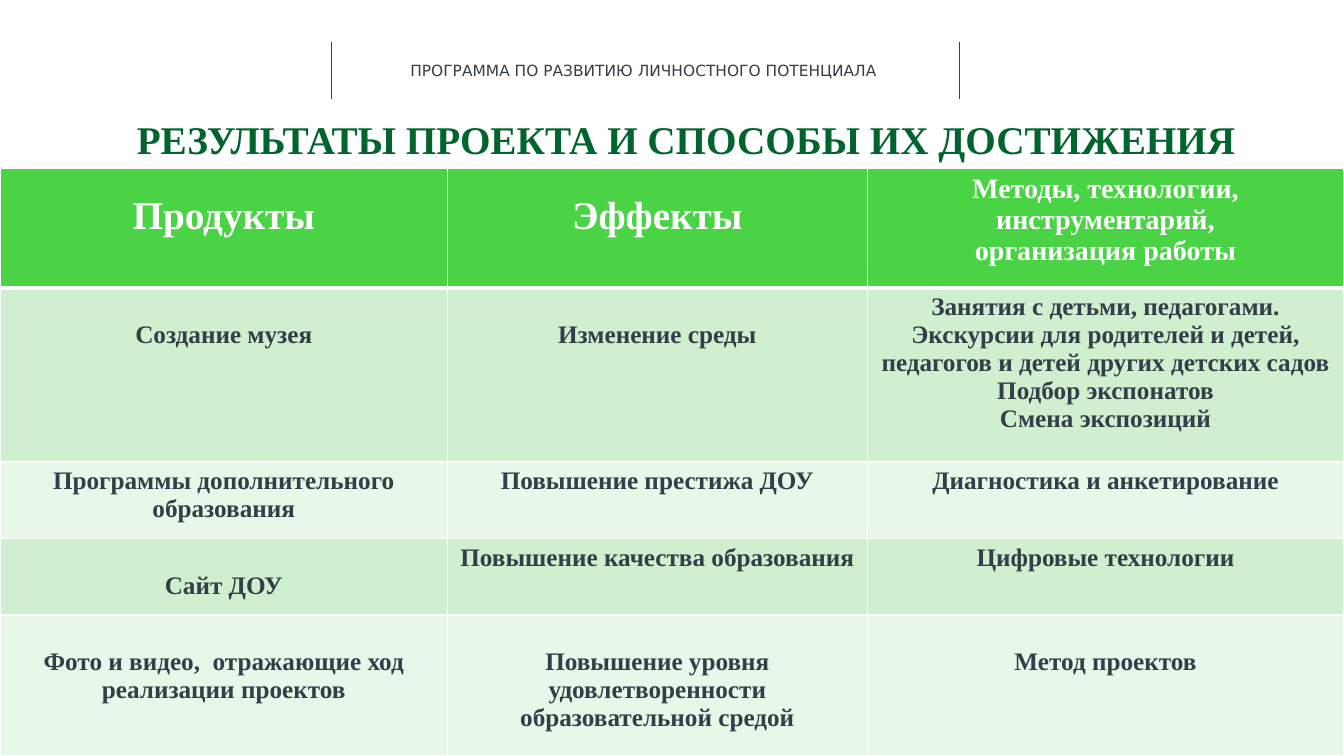
from lxml import etree
from pptx import Presentation
from pptx import util as u
from pptx.dml.color import RGBColor
from pptx.enum import shapes, text
from pptx.oxml import ns

COLORS = {
    "white": "FFFFFF",
    "slate": "333E48",
    "forest": "00642D",
    "header": "49D345",
    "band_dark": "D0EFCF",
    "band_light": "E9F7E9",
}
SERIF = "Times New Roman"
BODY = {"size": 18, "color": "slate"}
HEADING = {"size": 28, "color": "white", "line_spacing": 1.5}
METHODS_HEADING = {"size": 20, "color": "white"}

COLUMN_WIDTHS = [319.7, 299.7, 340.6]
ROW_HEIGHTS = [85.7, 124.4, 54.6, 54.6, 100.7]
CELL_INSET = 3.6
BODY_LINE = 20

HEADERS = [
    ("Продукты", HEADING),
    ("Эффекты", HEADING),
    ("Методы, технологии,\nинструментарий,\nорганизация работы", METHODS_HEADING),
]
# Each cell: its text and how many lines it is lowered by
RESULTS = [
    [("Создание музея", 1),
     ("Изменение среды", 1),
     ("Занятия с детьми, педагогами. Экскурсии для родителей и детей, "
      "педагогов и детей других детских садов\nПодбор экспонатов\nСмена экспозиций", 0)],
    [("Программы дополнительного образования", 0),
     ("Повышение престижа ДОУ", 0),
     ("Диагностика и анкетирование", 0)],
    [("Сайт ДОУ", 1),
     ("Повышение качества образования", 0),
     ("Цифровые технологии", 0)],
    [("Фото и видео,  отражающие ход\nреализации проектов", 1),
     ("Повышение уровня удовлетворенности\nобразовательной средой", 1),
     ("Метод проектов", 1)],
]


def rgb(name):
    return RGBColor.from_string(COLORS[name])


class SlideBuilder:
    def __init__(self, deck):
        self.page = deck.slides.add_slide(deck.slide_layouts[5])
        fill = self.page.background.fill
        fill.solid()
        fill.fore_color.rgb = rgb("white")

    def fill_text(self, frame, content, size, color, font=SERIF, bold=True,
                  align=text.PP_ALIGN.CENTER, line_spacing=1.0):
        frame.word_wrap = True
        frame.text = content
        for para in frame.paragraphs:
            para.alignment = align
            para.line_spacing = line_spacing
            para.space_before = u.Pt(0)
            for span in para.runs:
                for key, value in {"name": font, "size": u.Pt(size), "bold": bold}.items():
                    setattr(span.font, key, value)
                span.font.color.rgb = rgb(color)

    def title(self, content, left, top, width, height):
        box = self.page.shapes.title
        place = {"left": left, "top": top, "width": width, "height": height}
        for key, value in place.items():
            setattr(box, key, u.Pt(value))
        box.text_frame.auto_size = text.MSO_AUTO_SIZE.NONE
        box.text_frame.vertical_anchor = text.MSO_ANCHOR.MIDDLE
        self.fill_text(box.text_frame, content, 28, "forest", line_spacing=0.9)

    def label(self, content, left, top, width, height):
        box = self.page.shapes.add_textbox(*map(u.Pt, (left, top, width, height)))
        self.fill_text(box.text_frame, content, 11, "slate", "DejaVu Sans", False,
                       text.PP_ALIGN.LEFT)

    def vertical_rule(self, x, top, bottom):
        rule = self.page.shapes.add_connector(
            shapes.MSO_CONNECTOR.STRAIGHT, *map(u.Pt, (x, top, x, bottom)))
        rule.line.color.rgb = rgb("slate")
        rule.line.width = u.Pt(0.5)
        etree.SubElement(rule._element.spPr, ns.qn("a:effectLst"))

    def borders(self, cell, top, bottom):
        properties = cell._tc.get_or_add_tcPr()
        for side, width in {"L": 1, "R": 1, "T": top, "B": bottom}.items():
            line = etree.SubElement(properties, ns.qn(f"a:ln{side}"), w=str(u.Pt(width)))
            solid = etree.SubElement(line, ns.qn("a:solidFill"))
            etree.SubElement(solid, ns.qn("a:srgbClr"), val=COLORS["white"])

    def cell(self, cell, content, style, fill, lowered=0, top=1, bottom=1):
        self.borders(cell, top, bottom)
        cell.fill.solid()
        cell.fill.fore_color.rgb = rgb(fill)
        cell.margin_top = u.Pt(CELL_INSET + lowered * BODY_LINE)
        self.fill_text(cell.text_frame, content, **style)

    def results_table(self, left, top):
        frame = self.page.shapes.add_table(
            len(ROW_HEIGHTS), len(COLUMN_WIDTHS),
            *map(u.Pt, (left, top, sum(COLUMN_WIDTHS), sum(ROW_HEIGHTS))))
        table = frame.table
        for column, width in zip(table.columns, COLUMN_WIDTHS):
            column.width = u.Pt(width)
        for row, height in zip(table.rows, ROW_HEIGHTS):
            row.height = u.Pt(height)
        for column, (content, style) in enumerate(HEADERS):
            self.cell(table.cell(0, column), content, style, "header", bottom=3)
        for row, results in enumerate(RESULTS, 1):
            band = "band_dark" if row % 2 else "band_light"
            for column, (content, lowered) in enumerate(results):
                self.cell(table.cell(row, column), content, BODY, band, lowered,
                          top=3 if row == 1 else 1)


def main():
    deck = Presentation()
    deck.slide_width, deck.slide_height = u.Pt(960), u.Pt(540)
    slide = SlideBuilder(deck)
    for x in (237, 685.5):
        slide.vertical_rule(x, 30, 70.5)
    slide.label("ПРОГРАММА ПО РАЗВИТИЮ ЛИЧНОСТНОГО ПОТЕНЦИАЛА", 286, 40, 351, 21)
    slide.results_table(0, 120)
    slide.title("РЕЗУЛЬТАТЫ ПРОЕКТА И СПОСОБЫ ИХ ДОСТИЖЕНИЯ", 80, 82, 820, 38)
    deck.save("out.pptx")


if __name__ == "__main__":
    main()
